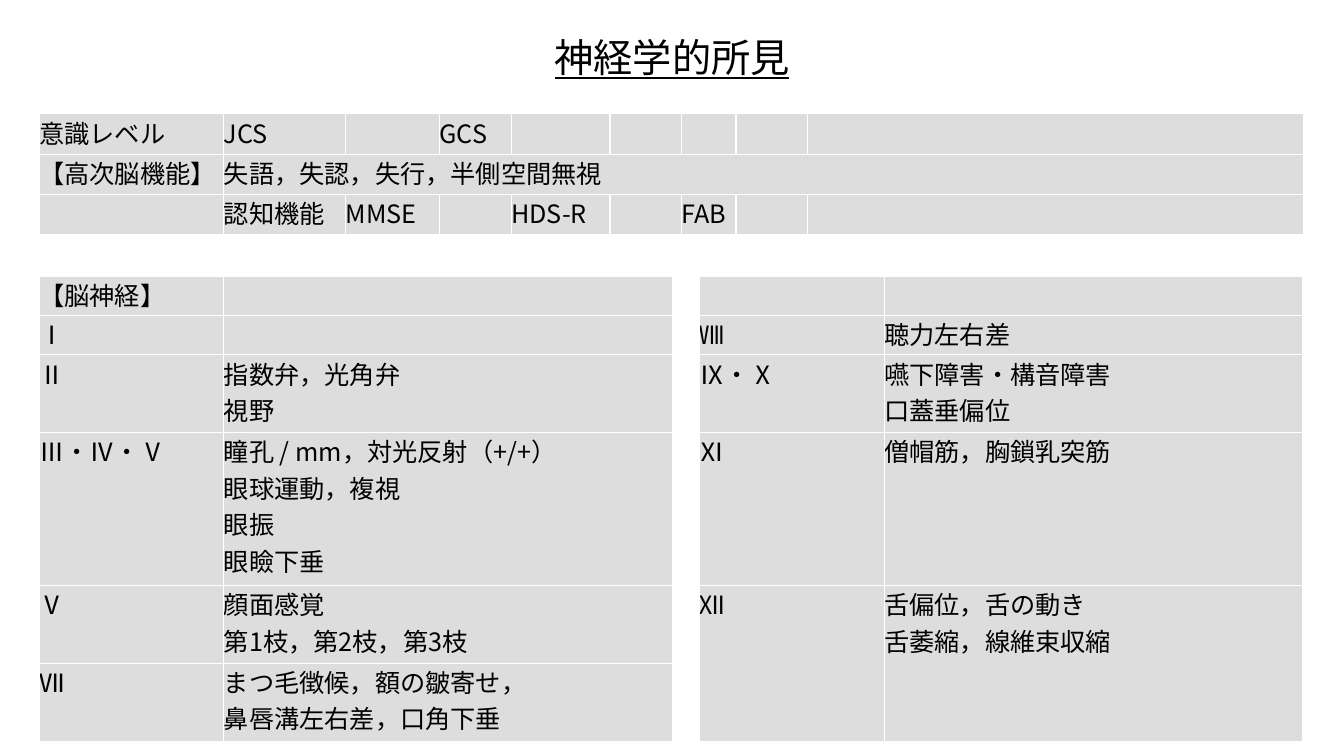
from lxml.etree import SubElement
from pptx import Presentation
from pptx.dml.color import RGBColor
from pptx.enum.lang import MSO_LANGUAGE_ID as Language
from pptx.enum.text import MSO_ANCHOR as Anchor, PP_ALIGN as Align
from pptx.oxml.ns import qn
from pptx.util import Inches, Pt

FONT = "Noto Sans CJK JP"
COLORS = {"text": "000000", "cell": "DDDDDD", "border": "FFFFFF"}
LABEL_WIDTH = 1.83
NERVE_TOP = 2.74
NERVE_ROWS = [0.39, 0.39, 0.77, 1.52, 0.77, 0.78]


def format_text(text_frame, size, underline=None):
    for paragraph in text_frame.paragraphs:
        for run in paragraph.runs:
            font_format = {"name": FONT, "size": Pt(size), "bold": False,
                           "underline": underline, "language_id": Language.JAPANESE}
            for name, value in font_format.items():
                setattr(run.font, name, value)
            run.font.color.rgb = RGBColor.from_string(COLORS["text"])
            # East Asian glyphs take their typeface from a separate element
            SubElement(run.font._element, qn("a:ea"), typeface=FONT)


def add_findings_table(left, top, columns, rows, texts, merges=()):
    """Add a grey table; texts maps (row, column) to the cell's wording."""
    frame = slide.shapes.add_table(len(rows), len(columns), Inches(left), Inches(top),
                                   Inches(sum(columns)), Inches(sum(rows)))
    table = frame.table
    table.first_row = table.horz_banding = False
    for column, width in zip(table.columns, columns):
        column.width = Inches(width)
    for row, height in zip(table.rows, rows):
        row.height = Inches(height)

    for row_index in range(len(rows)):
        for column_index in range(len(columns)):
            cell = table.cell(row_index, column_index)
            for side in ("left", "right", "top", "bottom"):
                setattr(cell, f"margin_{side}", 0)
            properties = cell._tc.get_or_add_tcPr()
            for edge in ("a:lnL", "a:lnR", "a:lnT", "a:lnB"):
                line = SubElement(properties, qn(edge), w=str(Pt(1)))
                fill = SubElement(line, qn("a:solidFill"))
                SubElement(fill, qn("a:srgbClr"), val=COLORS["border"])
            cell.fill.solid()
            cell.fill.fore_color.rgb = RGBColor.from_string(COLORS["cell"])
            text = texts.get((row_index, column_index))
            if text:
                # A vertical tab is a line break inside the paragraph
                cell.text_frame.text = text.replace("\n", "\v")
                format_text(cell.text_frame, 18)
    for first, last in merges:
        table.cell(*first).merge(table.cell(*last))


presentation = Presentation()
presentation.slide_width = Inches(13.33)
presentation.slide_height = Inches(7.5)
slide = presentation.slides.add_slide(presentation.slide_layouts[5])

title = slide.shapes.title
title_box = {"left": 5.03, "top": 0.1, "width": 3.27, "height": 0.92}
for name, value in title_box.items():
    setattr(title, name, Inches(value))
title_frame = title.text_frame
title_frame.text = "神経学的所見"
title_frame.vertical_anchor = Anchor.MIDDLE
for side in ("left", "right", "top", "bottom"):
    setattr(title_frame, f"margin_{side}", Inches(0.05))
title_frame.paragraphs[0].alignment = Align.CENTER
format_text(title_frame, 28, underline=True)

left_nerves = {
    (0, 0): "【脳神経】",
    (1, 0): "Ⅰ",
    (2, 0): "Ⅱ",
    (2, 1): "指数弁，光角弁\n視野",
    (3, 0): "Ⅲ・Ⅳ・Ⅴ",
    (3, 1): "瞳孔 / mm，対光反射（+/+）\n眼球運動，複視\n眼振\n眼瞼下垂",
    (4, 0): "Ⅴ",
    (4, 1): "顔面感覚\n第1枝，第2枝，第3枝",
    (5, 0): "Ⅶ",
    (5, 1): "まつ毛徴候，額の皺寄せ，\n鼻唇溝左右差，口角下垂",
}
add_findings_table(0.39, NERVE_TOP, [LABEL_WIDTH, 4.45], NERVE_ROWS, left_nerves)

right_nerves = {
    (1, 0): "Ⅷ",
    (1, 1): "聴力左右差",
    (2, 0): "Ⅸ・Ⅹ",
    (2, 1): "嚥下障害・構音障害\n口蓋垂偏位",
    (3, 0): "Ⅺ",
    (3, 1): "僧帽筋，胸鎖乳突筋",
    (4, 0): "Ⅻ",
    (4, 1): "舌偏位，舌の動き\n舌萎縮，線維束収縮",
}
add_findings_table(6.94, NERVE_TOP, [LABEL_WIDTH, 4.15], NERVE_ROWS, right_nerves,
                   merges=[((4, 0), (5, 0)), ((4, 1), (5, 1))])

consciousness = {
    (0, 0): "意識レベル",
    (0, 1): "JCS",
    (0, 3): "GCS",
    (1, 0): "【高次脳機能】",
    (1, 1): "失語，失認，失行，半側空間無視",
    (2, 1): "認知機能",
    (2, 2): "MMSE",
    (2, 4): "HDS-R",
    (2, 6): "FAB",
}
consciousness_columns = [LABEL_WIDTH, 1.21, 0.93, 0.71, 0.98, 0.71, 0.54, 0.71, 4.92]
add_findings_table(0.39, 1.13, consciousness_columns, [0.4] * 3, consciousness,
                   merges=[((1, 1), (1, 8))])

presentation.save("out.pptx")
